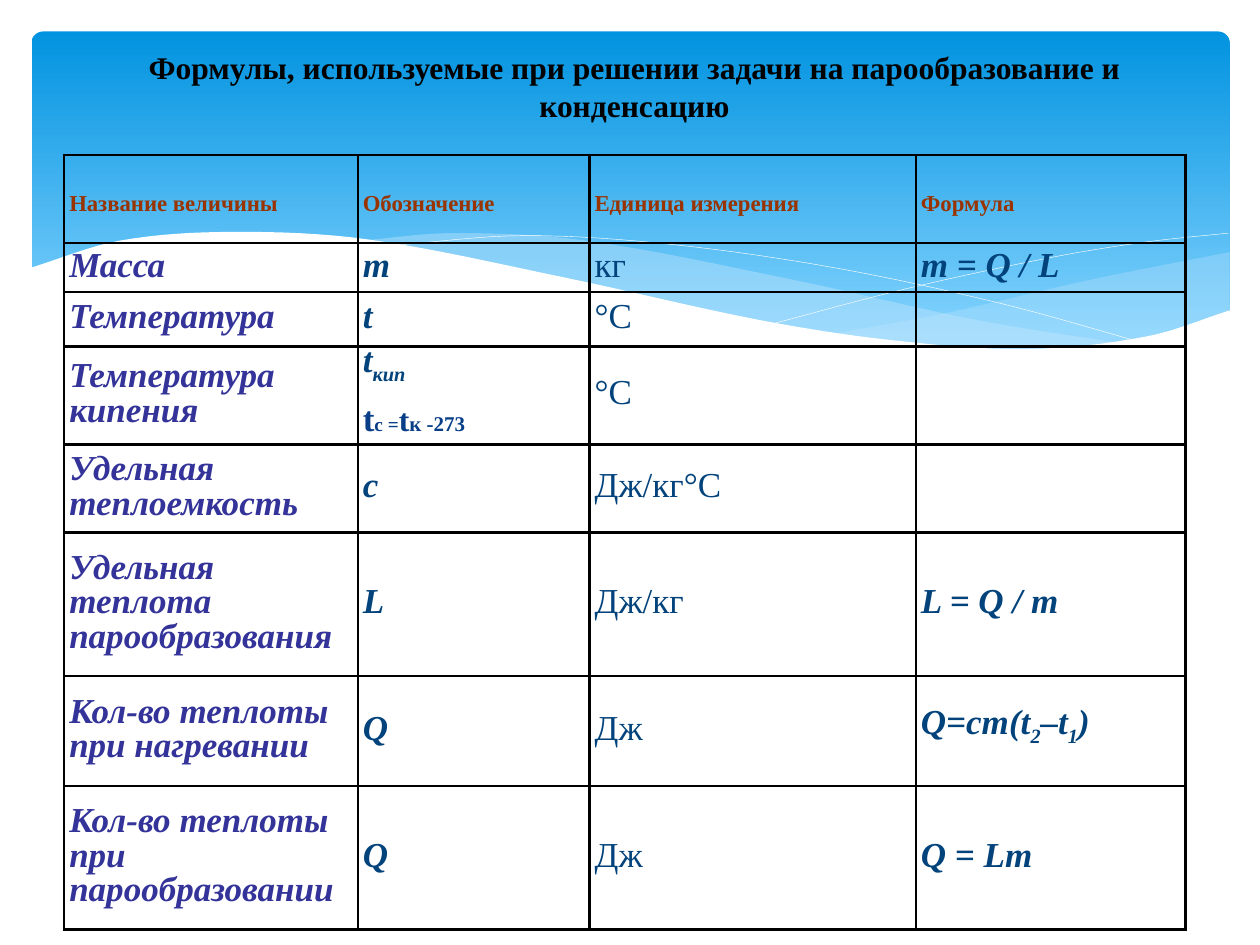
from lxml import etree
from pptx import Presentation
from pptx import util as u
from pptx.dml.color import RGBColor
from pptx.enum import shapes, text
from pptx.oxml.ns import qn

BLACK = RGBColor(0x00, 0x00, 0x00)
WHITE = RGBColor(0xFF, 0xFF, 0xFF)
SKY_TOP = RGBColor(0x02, 0x93, 0xE0)
SKY_BOTTOM = RGBColor(0x83, 0xD3, 0xFE)
WAVE = RGBColor(0xC6, 0xE7, 0xFC)
BROWN = RGBColor(0x99, 0x33, 0x00)
INDIGO = RGBColor(0x33, 0x33, 0x99)
NAVY = RGBColor(0x03, 0x43, 0x7C)
BLUE = RGBColor(0x07, 0x3E, 0x87)

# Knots that each curve passes through, from left to right, in inches.
RIGHT_TOP = [(6.61, 2.65), (7.53, 2.48), (8.61, 2.23), (9.76, 2)]
RIGHT_BOTTOM = [(6.61, 2.65), (7.19, 2.72), (8.03, 2.78), (8.89, 2.72), (9.76, 2.47)]
MIDDLE_TOP = [(2.86, 1.91), (3.61, 1.85), (4.65, 1.91), (6.29, 2.22), (7.75, 2.54), (8.93, 2.73)]
MIDDLE_BOTTOM = [(2.86, 1.91), (4.49, 2.22), (6.01, 2.55), (7.22, 2.74), (8.1, 2.78), (8.93, 2.73)]
FALLING_LINE = [(3.09, 1.95), (4.16, 1.87), (5.33, 1.94), (6.65, 2.13), (7.95, 2.41), (9.07, 2.72)]
RISING_LINE = [(6.13, 2.57), (7.2, 2.29), (8.36, 2.04), (9.1, 1.92), (9.75, 1.85)]
WHITE_TOP = [(0.23, 2.13), (0.95, 1.91), (1.85, 1.84), (2.92, 1.9), (4.47, 2.2), (6.03, 2.54),
             (7.08, 2.7), (8.15, 2.77), (9.1, 2.67), (9.77, 2.46)]
WHITE_BOTTOM = [(0.23, 3.29), (9.77, 3.29)]

COLUMNS = [2.33, 1.84, 2.59, 2.14]
ROW_HEIGHTS = [0.7, 0.39, 0.43, 0.77, 0.7, 1.14, 0.87, 1.14]
HEADER = ["Название величины", "Обозначение", "Единица измерения", "Формула"]
# Every second piece between underscores is a subscript.
QUANTITIES = [
    ["Масса", "m", "кг", "m = Q / L"],
    ["Температура", "t", "°С", ""],
    ["Температура кипения", "t_кип", "°С", ""],
    ["Удельная теплоемкость", "c", "Дж/кг°С", ""],
    ["Удельная теплота парообразования", "L", "Дж/кг", "L = Q / m"],
    ["Кол-во теплоты при нагревании", "Q", "Дж", "Q=cm(t_2_–t_1_)"],
    ["Кол-во теплоты при парообразовании", "Q", "Дж", "Q = Lm"],
]
NAME_COLUMN, SYMBOL_COLUMN, UNIT_COLUMN = 0, 1, 2
BOILING_ROW = 3
KELVIN_RULE = [("t", 20), ("с =", 11), ("t", 18), ("к -273", 12)]


def smooth(knots, steps=8):
    """Return points on a cubic Hermite curve through the knots."""
    last = len(knots) - 1
    slopes = []
    for i in range(last + 1):
        (x0, y0), (x1, y1) = knots[max(i - 1, 0)], knots[min(i + 1, last)]
        slopes.append((y1 - y0) / (x1 - x0))
    points = [knots[0]]
    for i in range(last):
        (x0, y0), (x1, y1) = knots[i:i + 2]
        width = x1 - x0
        for step in range(1, steps + 1):
            t = step / steps
            rise = t * t * (3 - 2 * t)
            bend = t * (1 - t) * ((1 - t) * slopes[i] - t * slopes[i + 1])
            points.append((x0 + width * t, y0 + (y1 - y0) * rise + width * bend))
    return points


class Deck:
    font = "Times New Roman"
    cell_margin = u.Inches(0.04)
    border = u.Pt(1.5)

    def __init__(self, prs):
        self.s = prs.slides.add_slide(prs.slide_layouts[6])

    def style(self, p, size, color, bold=False, italic=False):
        f = p.font
        f.name, f.size, f.bold, f.italic = self.font, u.Pt(size), bold, italic
        f.color.rgb = color

    def sky(self, x, y, w, h):
        sp = self.s.shapes.add_shape(shapes.MSO_SHAPE.ROUNDED_RECTANGLE, *map(u.Inches, (x, y, w, h)))
        sp.shadow.inherit = False
        sp.adjustments[0] = 0.034
        sp.line.fill.background()
        sp.fill.gradient()
        sp.fill.gradient_angle = 270
        for stop, color, position in zip(sp.fill.gradient_stops, (SKY_TOP, SKY_BOTTOM), (0, 0.9)):
            stop.color.rgb, stop.position = color, position

    def outline(self, points, closed):
        pts = [(u.Inches(x), u.Inches(y)) for x, y in points]
        fb = self.s.shapes.build_freeform(*pts[0])
        fb.add_line_segments(pts[1:], close=closed)
        sp = fb.convert_to_shape()
        sp.shadow.inherit = False
        return sp

    def wave(self, top, bottom, color, opacity=100):
        """Fill the band between two curves."""
        sp = self.outline(smooth(top) + smooth(bottom)[::-1], True)
        sp.line.fill.background()
        sp.fill.solid()
        sp.fill.fore_color.rgb = color
        if opacity < 100:
            clr = sp._element.spPr.find(qn("a:solidFill"))[0]
            etree.SubElement(clr, qn("a:alpha"), val=str(opacity * 1000))

    def hairline(self, knots):
        sp = self.outline(smooth(knots), False)
        sp.fill.background()
        sp.line.color.rgb = WHITE
        sp.line.width = u.Pt(0.25)

    def title(self, words, x, y, w, h):
        tf = self.s.shapes.add_textbox(*map(u.Inches, (x, y, w, h))).text_frame
        tf.word_wrap = True
        tf.vertical_anchor = text.MSO_ANCHOR.MIDDLE
        p = tf.paragraphs[0]
        p.text = words
        p.alignment = text.PP_ALIGN.CENTER
        self.style(p, 18, BLACK, bold=True)

    def table(self, x, y, columns, heights):
        frame = self.s.shapes.add_table(len(heights), len(columns), u.Inches(x), u.Inches(y),
                                        u.Inches(sum(columns)), u.Inches(sum(heights)))
        tbl = frame.table
        tbl.first_row = tbl.horz_banding = False
        for col, w in zip(tbl.columns, columns):
            col.width = u.Inches(w)
        for row, h in zip(tbl.rows, heights):
            row.height = u.Inches(h)
        for cell in tbl.iter_cells():
            self.frame_cell(cell)
        return tbl

    def frame_cell(self, cell):
        cell.margin_left = cell.margin_right = self.cell_margin
        cell.margin_top = cell.margin_bottom = self.cell_margin
        cell.vertical_anchor = text.MSO_ANCHOR.MIDDLE
        tcPr = cell._tc.get_or_add_tcPr()
        for side in ("a:lnL", "a:lnR", "a:lnT", "a:lnB"):
            ln = etree.SubElement(tcPr, qn(side), w=str(self.border))
            fill = etree.SubElement(ln, qn("a:solidFill"))
            etree.SubElement(fill, qn("a:srgbClr"), val=str(BLACK))
        cell.fill.background()

    def entry(self, p, words, size, color, bold=False, italic=False):
        """Write one table paragraph, with subscripts between underscores."""
        p.line_spacing, p.space_after = u.Pt(19.5), u.Pt(11.2)
        self.style(p, size, color, bold, italic)
        for i, piece in enumerate(words.split("_")):
            if piece:
                r = p.add_run()
                r.text = piece
                if i % 2:
                    r._r.get_or_add_rPr().set("baseline", "-25000")

    def sized_entry(self, p, pieces, color):
        """Write one bold table paragraph whose pieces differ in size."""
        self.entry(p, "", pieces[0][1], color, bold=True)
        for words, size in pieces:
            r = p.add_run()
            r.text, r.font.size = words, u.Pt(size)


def draw_background(deck):
    deck.sky(0.25, 0.25, 9.51, 2.7)
    deck.wave(RIGHT_TOP, RIGHT_BOTTOM, WAVE, 29)
    deck.wave(MIDDLE_TOP, MIDDLE_BOTTOM, WAVE, 40)
    for knots in (FALLING_LINE, RISING_LINE):
        deck.hairline(knots)
    deck.wave(WHITE_TOP, WHITE_BOTTOM, WHITE)


def fill_formulas(deck, tbl):
    for c, words in enumerate(HEADER):
        deck.entry(tbl.cell(0, c).text_frame.paragraphs[0], words, 13, BROWN, bold=True)
    for row, quantity in enumerate(QUANTITIES, 1):
        for c, words in enumerate(quantity):
            if words:
                color = INDIGO if c == NAME_COLUMN else NAVY
                strong = c != UNIT_COLUMN
                p = tbl.cell(row, c).text_frame.paragraphs[0]
                deck.entry(p, words, 20, color, bold=strong, italic=strong)
    boiling = tbl.cell(BOILING_ROW, SYMBOL_COLUMN).text_frame
    deck.sized_entry(boiling.add_paragraph(), KELVIN_RULE, BLUE)


def main():
    prs = Presentation()
    prs.slide_width, prs.slide_height = u.Inches(10), u.Inches(7.5)
    deck = Deck(prs)
    draw_background(deck)
    deck.title("Формулы, используемые при решении задачи на парообразование и конденсацию",
               0.43, 0.25, 9.21, 0.87)
    fill_formulas(deck, deck.table(0.51, 1.23, COLUMNS, ROW_HEIGHTS))
    prs.save("out.pptx")


if __name__ == "__main__":
    main()
